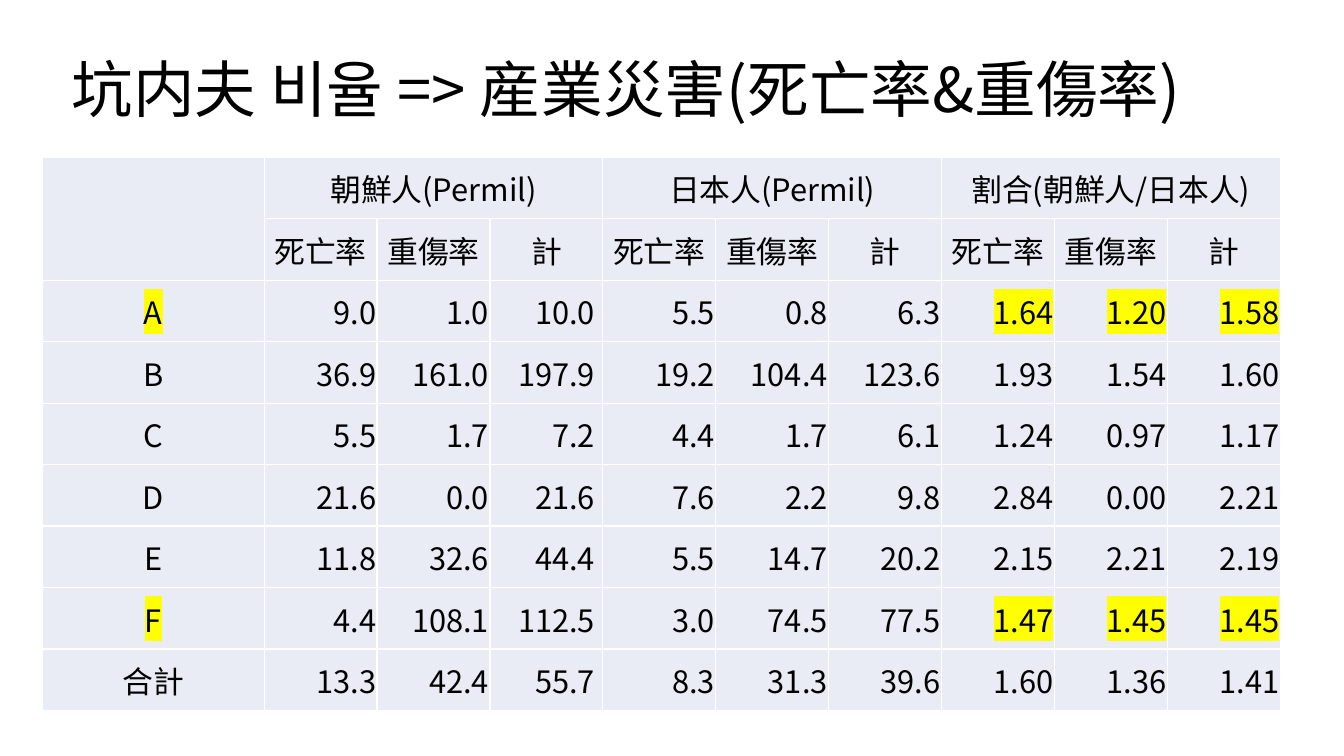
"""Build a slide comparing industrial accident rates of two groups of miners."""
from dataclasses import dataclass

from lxml.etree import SubElement
from pptx import Presentation
from pptx.dml.color import RGBColor
from pptx.enum.text import MSO_ANCHOR as Anchor, MSO_AUTO_SIZE as AutoSize, PP_ALIGN as Align
from pptx.oxml.ns import qn
from pptx.util import Inches, Pt

BLACK = RGBColor(0x00, 0x00, 0x00)
YELLOW = RGBColor(0xFF, 0xFF, 0x00)
CELL_FILL = RGBColor(0xE9, 0xEB, 0xF5)
TITLE_FONT = "Noto Sans CJK JP"
TABLE_FONT = "Noto Sans CJK KR"
TITLE = "坑内夫 비율 => 産業災害(死亡率&重傷率)"
GROUPS = ("朝鮮人(Permil)", "日本人(Permil)", "割合(朝鮮人/日本人)")
MEASURES = ("死亡率", "重傷率", "計")
LABEL_WIDTH, VALUE_WIDTH, ROW_HEIGHT = 2.2, 1.12, 0.61
HEADER_ROWS = 2
INDENTED_COLUMN = 3
RATIO_START = 7


@dataclass(frozen=True)
class Mine:
    label: str
    values: str
    marked: bool = False


MINES = (
    Mine("A", "9.0 1.0 10.0 5.5 0.8 6.3 1.64 1.20 1.58", True),
    Mine("B", "36.9 161.0 197.9 19.2 104.4 123.6 1.93 1.54 1.60"),
    Mine("C", "5.5 1.7 7.2 4.4 1.7 6.1 1.24 0.97 1.17"),
    Mine("D", "21.6 0.0 21.6 7.6 2.2 9.8 2.84 0.00 2.21"),
    Mine("E", "11.8 32.6 44.4 5.5 14.7 20.2 2.15 2.21 2.19"),
    Mine("F", "4.4 108.1 112.5 3.0 74.5 77.5 1.47 1.45 1.45", True),
    Mine("合計", "13.3 42.4 55.7 8.3 31.3 39.6 1.60 1.36 1.41"),
)


def set_all(target, values: dict) -> None:
    for name, value in values.items():
        setattr(target, name, value)


def write(para, text: str, font: str, size: int, align: Align, marked: bool = False) -> None:
    para.alignment = align
    span = para.add_run()
    span.text = text
    span.font.size = Pt(size)
    span.font.color.rgb = BLACK
    properties = span.font._element
    if marked:
        highlight = SubElement(properties, qn("a:highlight"))
        SubElement(highlight, qn("a:srgbClr"), val=str(YELLOW))
    for script in ("a:latin", "a:ea"):
        SubElement(properties, qn(script), typeface=font)


def write_cell(cell, text: str, align: Align = Align.CENTER, marked: bool = False,
               right: float = 0.01) -> None:
    set_all(cell, {
        "vertical_anchor": Anchor.MIDDLE,
        "margin_left": Inches(0.01),
        "margin_top": Inches(0.01),
        "margin_right": Inches(right),
        "margin_bottom": 0,
    })
    write(cell.text_frame.paragraphs[0], text, TABLE_FONT, 22, align, marked)


def add_title(page) -> None:
    box = page.shapes.title
    set_all(box, {"left": Inches(0.61), "top": Inches(0.47),
                  "width": Inches(12.42), "height": Inches(0.9)})
    set_all(box.text_frame, {"word_wrap": True, "auto_size": AutoSize.NONE,
                             "vertical_anchor": Anchor.MIDDLE})
    para = box.text_frame.paragraphs[0]
    para.line_spacing = 0.9
    write(para, TITLE, TITLE_FONT, 44, Align.LEFT)


def add_rates(page) -> None:
    row_count = HEADER_ROWS + len(MINES)
    widths = [LABEL_WIDTH] + [VALUE_WIDTH] * (len(GROUPS) * len(MEASURES))
    table = page.shapes.add_table(
        row_count, len(widths), Inches(0.42), Inches(1.56),
        Inches(sum(widths)), Inches(ROW_HEIGHT * row_count)).table
    set_all(table, {"first_row": False, "horz_banding": False})
    for column, width in zip(table.columns, widths):
        column.width = Inches(width)
    for row in table.rows:
        row.height = Inches(ROW_HEIGHT)
    for cell in table.iter_cells():
        cell.fill.solid()
        cell.fill.fore_color.rgb = CELL_FILL

    table.cell(0, 0).merge(table.cell(1, 0))
    for index, group in enumerate(GROUPS):
        first = 1 + index * len(MEASURES)
        table.cell(0, first).merge(table.cell(0, first + len(MEASURES) - 1))
        write_cell(table.cell(0, first), group)
        for column, measure in enumerate(MEASURES, first):
            write_cell(table.cell(1, column), measure)

    for row, mine in enumerate(MINES, HEADER_ROWS):
        write_cell(table.cell(row, 0), mine.label, marked=mine.marked)
        for column, value in enumerate(mine.values.split(), 1):
            write_cell(table.cell(row, column), value, Align.RIGHT,
                       mine.marked and column >= RATIO_START,
                       0.08 if column == INDENTED_COLUMN else 0.01)


def main() -> None:
    deck = Presentation()
    set_all(deck, {"slide_width": Inches(13.33), "slide_height": Inches(7.5)})
    page = deck.slides.add_slide(deck.slide_layouts[5])
    add_title(page)
    add_rates(page)
    deck.save("out.pptx")


if __name__ == "__main__":
    main()
